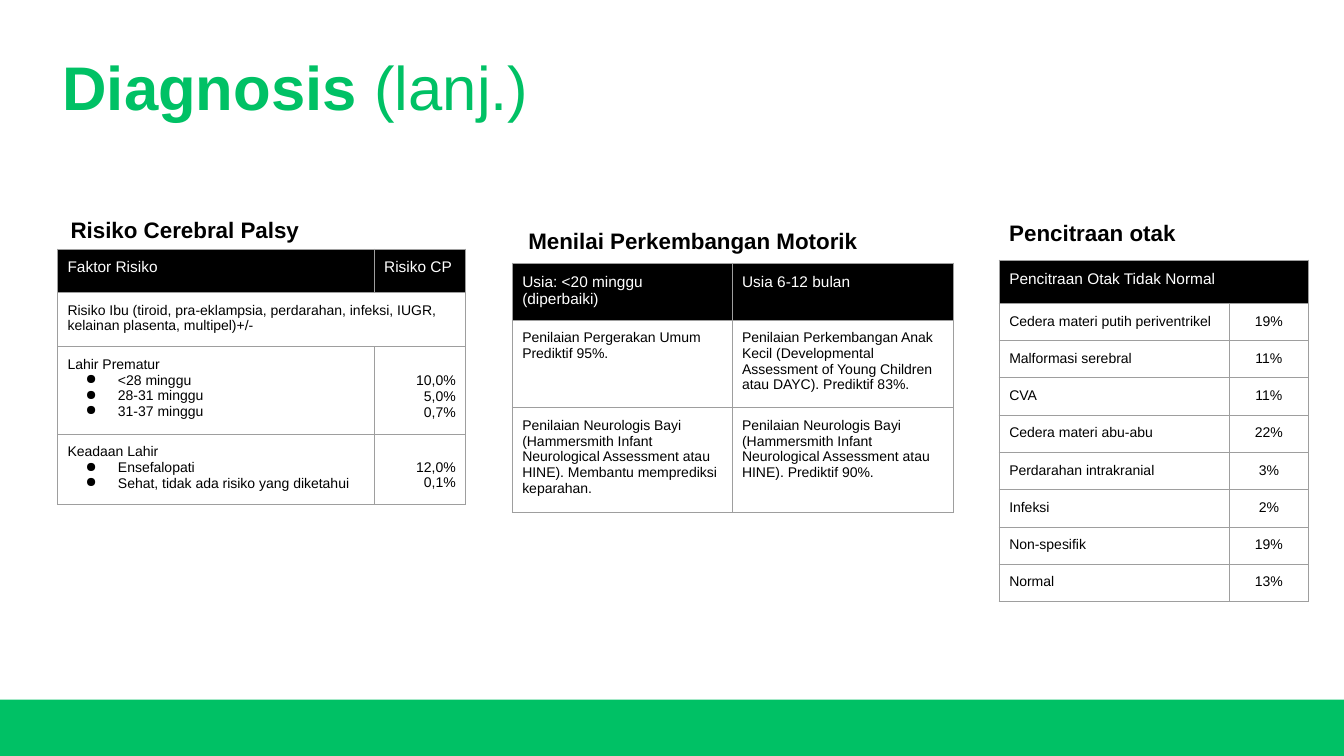
from dataclasses import dataclass

from lxml.etree import SubElement
from pptx import Presentation
from pptx.dml.color import RGBColor
from pptx.enum.shapes import MSO_SHAPE
from pptx.enum.text import MSO_ANCHOR, PP_ALIGN
from pptx.oxml import parse_xml
from pptx.oxml.ns import nsdecls, qn
from pptx.slide import Slide
from pptx.util import Inches, Pt


@dataclass(frozen=True)
class Theme:
    font: str = "Arial"
    green: str = "00C165"
    black: str = "000000"
    white: str = "FFFFFF"
    border: str = "9E9E9E"
    border_width: float = 0.75
    title: int = 44
    heading: int = 16
    header: int = 11
    body: int = 10


@dataclass(frozen=True)
class Run:
    text: str
    size: int
    color: str
    bold: bool = False


@dataclass(frozen=True)
class Cell:
    text: str = ""
    bullets: tuple[str, ...] = ()
    values: tuple[str, ...] = ()
    align: PP_ALIGN = PP_ALIGN.LEFT


@dataclass(frozen=True)
class Panel:
    heading: str
    heading_box: tuple[float, float, float]
    left: float
    top: float
    cols: tuple[float, ...]
    heights: tuple[float, ...]
    rows: list[tuple[Cell, ...]]


THEME = Theme()

FINDINGS = [
    ("Cedera materi putih periventrikel", "19%"),
    ("Malformasi serebral", "11%"),
    ("CVA", "11%"),
    ("Cedera materi abu-abu", "22%"),
    ("Perdarahan intrakranial", "3%"),
    ("Infeksi", "2%"),
    ("Non-spesifik", "19%"),
    ("Normal", "13%"),
]

PANELS = [
    Panel(
        "Risiko Cerebral Palsy", (0.65, 2.1, 3.89),
        0.57, 2.47, (3.14, 0.91), (0.43, 0.54, 0.86, 0.7),
        [
            (Cell("Faktor Risiko"), Cell("Risiko CP")),
            (Cell("Risiko Ibu (tiroid, pra-eklampsia, perdarahan, infeksi, IUGR, "
                  "kelainan plasenta, multipel)+/-"),),
            (Cell("Lahir Prematur", ("<28 minggu", "28-31 minggu", "31-37 minggu")),
             Cell(values=("10,0%", "5,0%", "0,7%"), align=PP_ALIGN.RIGHT)),
            (Cell("Keadaan Lahir",
                  ("Ensefalopati", "Sehat, tidak ada risiko yang diketahui")),
             Cell(values=("12,0%", "0,1%"), align=PP_ALIGN.RIGHT)),
        ],
    ),
    Panel(
        "Menilai Perkembangan Motorik", (5.19, 2.2, 3.53),
        5.08, 2.61, (2.18, 2.2), (0.56, 0.87, 1.04),
        [
            (Cell("Usia: <20 minggu (diperbaiki)"), Cell("Usia 6-12 bulan")),
            (Cell("Penilaian Pergerakan Umum Prediktif 95%."),
             Cell("Penilaian Perkembangan Anak Kecil (Developmental Assessment of "
                  "Young Children atau DAYC). Prediktif 83%.")),
            (Cell("Penilaian Neurologis Bayi (Hammersmith Infant Neurological "
                  "Assessment atau HINE). Membantu memprediksi keparahan."),
             Cell("Penilaian Neurologis Bayi (Hammersmith Infant Neurological "
                  "Assessment atau HINE). Prediktif 90%.")),
        ],
    ),
    Panel(
        "Pencitraan otak", (9.96, 2.12, 2.56),
        9.91, 2.58, (2.28, 0.79), (0.43,) + (0.37,) * len(FINDINGS),
        [(Cell("Pencitraan Otak Tidak Normal"),)]
        + [(Cell(name), Cell(share, align=PP_ALIGN.CENTER)) for name, share in FINDINGS],
    ),
]


def add_run(p, run: Run) -> None:
    r = p.add_run()
    r.text = run.text
    r.font.name = THEME.font
    r.font.size = Pt(run.size)
    r.font.bold = run.bold
    r.font.color.rgb = RGBColor.from_string(run.color)


def add_text(s: Slide, left: float, top: float, width: float, height: float,
             runs: list[Run], anchor: MSO_ANCHOR = MSO_ANCHOR.TOP,
             spacing: float = 1.0) -> None:
    tf = s.shapes.add_textbox(
        Inches(left), Inches(top), Inches(width), Inches(height)).text_frame
    tf.word_wrap = True
    tf.vertical_anchor = anchor
    tf.margin_left = tf.margin_right = tf.margin_top = tf.margin_bottom = Inches(0.05)
    p = tf.paragraphs[0]
    p.line_spacing = spacing
    for run in runs:
        add_run(p, run)


def add_bullet(p) -> None:
    pPr = p._p.get_or_add_pPr()
    pPr.set("marL", str(Inches(0.5)))
    pPr.set("indent", str(Inches(-0.32)))
    color = SubElement(pPr, qn("a:buClr"))
    SubElement(color, qn("a:srgbClr")).set("val", THEME.black)
    SubElement(pPr, qn("a:buChar")).set("char", "●")


def add_borders(cell) -> None:
    tcPr = cell._tc.get_or_add_tcPr()
    for i, side in enumerate(("lnL", "lnR", "lnT", "lnB")):
        tcPr.insert(i, parse_xml(
            f'<a:{side} {nsdecls("a")} w="{Pt(THEME.border_width)}"><a:solidFill>'
            f'<a:srgbClr val="{THEME.border}"/></a:solidFill></a:{side}>'))


def fill_cell(cell, content: Cell, is_header: bool) -> None:
    cell.margin_left = cell.margin_right = Inches(0.1)
    cell.margin_top = cell.margin_bottom = Inches(0.1)
    if content.values:
        cell.vertical_anchor = MSO_ANCHOR.BOTTOM
        cell.margin_bottom = Inches(0.14)
    size = THEME.header if is_header else THEME.body
    color = THEME.white if is_header else THEME.black
    tf = cell.text_frame
    lines = content.values or (content.text, *content.bullets)
    for i, line in enumerate(lines):
        p = tf.paragraphs[0] if i == 0 else tf.add_paragraph()
        p.alignment = content.align
        if content.bullets and i > 0:
            add_bullet(p)
        add_run(p, Run(line, size, color))


def add_panel(s: Slide, panel: Panel) -> None:
    add_text(s, *panel.heading_box, 0.34,
             [Run(panel.heading, THEME.heading, THEME.black, True)])
    table = s.shapes.add_table(
        len(panel.rows), len(panel.cols), Inches(panel.left), Inches(panel.top),
        Inches(sum(panel.cols)), Inches(sum(panel.heights))).table
    table.horz_banding = False
    for col, width in zip(table.columns, panel.cols):
        col.width = Inches(width)
    for i, (row, height) in enumerate(zip(panel.rows, panel.heights)):
        table.rows[i].height = Inches(height)
        for j in range(len(panel.cols)):
            cell = table.cell(i, j)
            cell.fill.solid()
            cell.fill.fore_color.rgb = RGBColor.from_string(
                THEME.black if i == 0 else THEME.white)
            add_borders(cell)
        if len(row) < len(panel.cols):
            table.cell(i, 0).merge(table.cell(i, len(panel.cols) - 1))
        for j, content in enumerate(row):
            fill_cell(table.cell(i, j), content, i == 0)


def main() -> None:
    prs = Presentation()
    prs.slide_width, prs.slide_height = Inches(13.33), Inches(7.5)
    s = prs.slides.add_slide(prs.slide_layouts[6])
    band = s.shapes.add_shape(
        MSO_SHAPE.RECTANGLE, 0, Inches(6.94), prs.slide_width, Inches(0.56))
    band.shadow.inherit = False
    band.fill.solid()
    band.fill.fore_color.rgb = RGBColor.from_string(THEME.green)
    band.line.fill.background()
    add_text(s, 0.57, 0.5, 5.47, 0.78,
             [Run("Diagnosis ", THEME.title, THEME.green, True),
              Run("(lanj.)", THEME.title, THEME.green)],
             MSO_ANCHOR.BOTTOM, 0.9)
    for panel in PANELS:
        add_panel(s, panel)
    prs.save("out.pptx")


if __name__ == "__main__":
    main()
